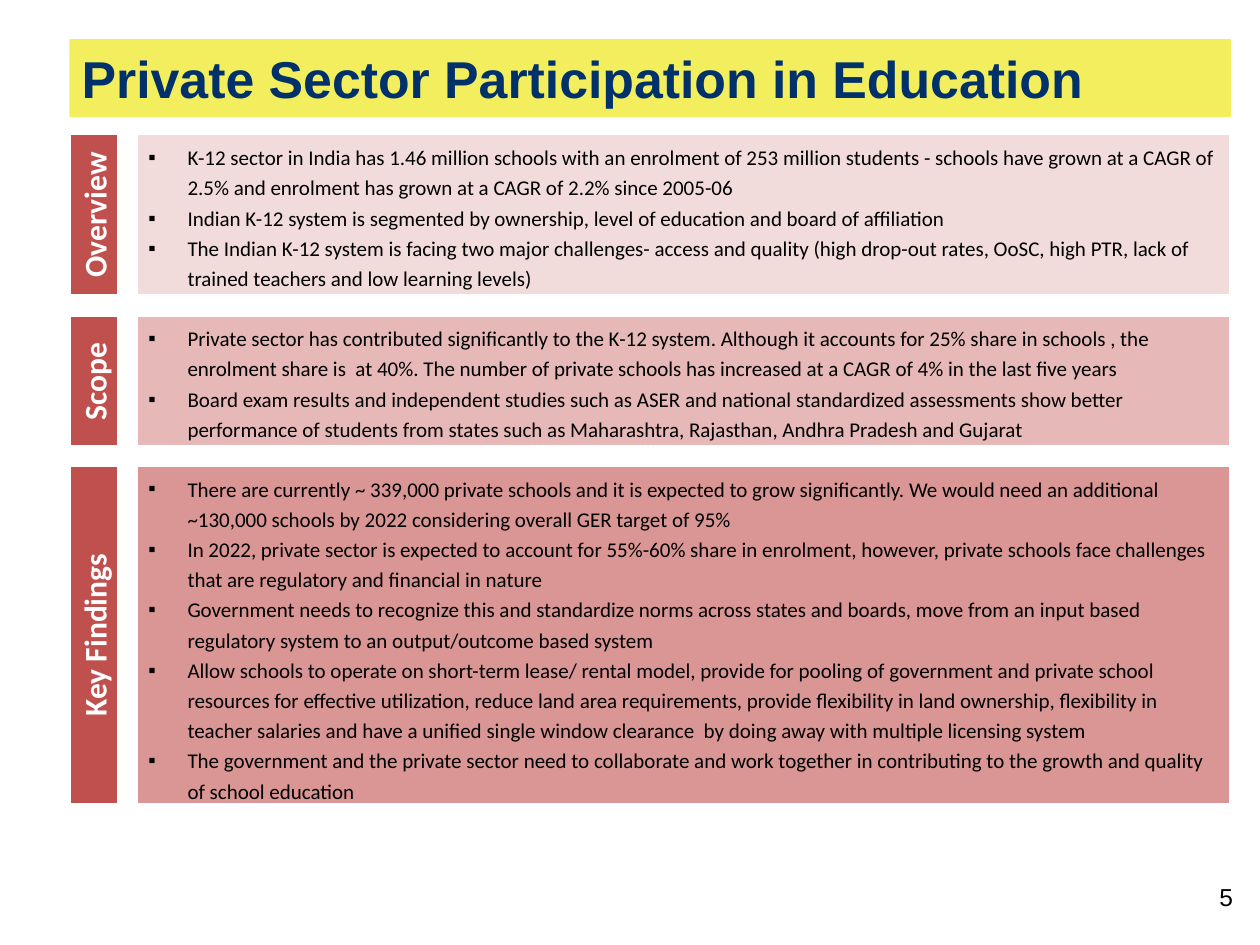
from pptx import Presentation
from pptx.dml.color import RGBColor
from pptx.enum import shapes, text
from pptx.oxml.ns import qn
from pptx.util import Inches, Pt
from lxml import etree

LEFT, BODY, RIGHT = 0.55, 1.08, 9.77
TAB = 0.39
MID, TOP = text.MSO_ANCHOR.MIDDLE, text.MSO_ANCHOR.TOP

# label, top, height, fill, anchor, points
BANDS = [
    ("Overview", 1.06, 1.29, "F2DCDB", TOP, [
        "K-12 sector in India has 1.46 million schools with an enrolment of 253 million students - schools have grown at a CAGR of 2.5% and enrolment has grown at a CAGR of 2.2% since 2005-06",
        "Indian K-12 system is segmented by ownership, level of education and board of affiliation",
        "The Indian K-12 system is facing two major challenges- access and quality (high drop-out rates, OoSC, high PTR, lack of trained teachers and low learning levels)",
    ]),
    ("Scope", 2.5, 1.05, "E6B9B8", MID, [
        "Private sector has contributed significantly to the K-12 system. Although it accounts for 25% share in schools , the enrolment share is  at 40%. The number of private schools has increased at a CAGR of 4% in the last five years",
        "Board exam results and independent studies such as ASER and national standardized assessments show better performance of students from states such as Maharashtra, Rajasthan, Andhra Pradesh and Gujarat",
    ]),
    ("Key Findings", 3.69, 2.7, "D99694", TOP, [
        "There are currently ~ 339,000 private schools and it is expected to grow significantly. We would need an additional ~130,000 schools by 2022 considering overall GER target of 95%",
        "In 2022, private sector is expected to account for 55%-60% share in enrolment, however, private schools face challenges that are regulatory and financial in nature",
        "Government needs to recognize this and standardize norms across states and boards, move from an input based regulatory system to an output/outcome based system",
        "Allow schools to operate on short-term lease/ rental model, provide for pooling of government and private school resources for effective utilization, reduce land area requirements, provide flexibility in land ownership, flexibility in teacher salaries and have a unified single window clearance  by doing away with multiple licensing system",
        "The government and the private sector need to collaborate and work together in contributing to the growth and quality of school education",
    ]),
]


def paint(fmt, hue):
    if isinstance(fmt, type(None)):
        return
    fmt.rgb = RGBColor.from_string(hue)


def put(obj, **vals):
    for key, val in vals.items():
        setattr(obj, key, val)


def box(slide, at, fill, edge=None):
    rect = slide.shapes.add_shape(
        shapes.MSO_SHAPE.RECTANGLE, *[Inches(v) for v in at])
    rect.shadow.inherit = False
    rect.fill.solid()
    paint(rect.fill.fore_color, fill)
    if edge:
        paint(rect.line.color, edge)
        rect.line.width = Pt(2)
    else:
        rect.line.fill.background()
    return rect


def write(frame, lines, hue, font, **look):
    """Fill the frame with one paragraph a line."""
    put(frame, word_wrap=True)
    for i, line in enumerate(lines):
        para = frame.add_paragraph() if i else frame.paragraphs[0]
        put(para, **look)
        run = para.add_run()
        run.text = line
        put(run.font, **font)
        paint(run.font.color, hue)


def bullet(para):
    props = para._p.get_or_add_pPr()
    props.set("marL", str(Inches(0.31)))
    props.set("indent", str(-Inches(0.31)))
    etree.SubElement(props, qn("a:buFont")).set("typeface", "Arial")
    etree.SubElement(props, qn("a:buChar")).set("char", "▪")


def title(slide):
    bar = box(slide, (LEFT, 0.31, RIGHT - LEFT, 0.62), "F3EE5E")
    sides = ("left", "right", "top", "bottom")
    put(bar.text_frame, vertical_anchor=MID,
        **{f"margin_{side}": Inches(0.1) for side in sides})
    write(bar.text_frame, ["Private Sector Participation in Education"],
          "00316B", dict(name="Arial", size=Pt(29.6), bold=True),
          alignment=text.PP_ALIGN.LEFT, space_before=Pt(6))


def band(slide, label, top, high, fill, anchor, points):
    # Points
    body = box(slide, (BODY, top, RIGHT - BODY, high), fill, "FFFFFF")
    body.text_frame.vertical_anchor = anchor
    write(body.text_frame, points, "000000",
          dict(name="Calibri", size=Pt(12)),
          alignment=text.PP_ALIGN.LEFT, line_spacing=1.2, level=1)
    for para in body.text_frame.paragraphs:
        bullet(para)
    # Upright label
    tab = box(slide, (LEFT, top, TAB, high), "C0504D", "FFFFFF")
    tab.text_frame.vertical_anchor = MID
    tab.text_frame._txBody.bodyPr.set("vert", "vert270")
    write(tab.text_frame, [label], "FFFFFF",
          dict(name="Calibri", size=Pt(18), bold=True),
          alignment=text.PP_ALIGN.CENTER)


def number(slide):
    note = slide.shapes.add_textbox(
        *[Inches(v) for v in (9.58, 6.95, 0.42, 0.4)])
    write(note.text_frame, ["5"], "000000", dict(name="Arial", size=Pt(14)))


def main():
    deck = Presentation()
    put(deck, slide_width=Inches(10), slide_height=Inches(7.5))
    slide = deck.slides.add_slide(deck.slide_layouts[6])
    title(slide)
    for row in BANDS:
        band(slide, *row)
    number(slide)
    deck.save("out.pptx")


if __name__ == "__main__":
    main()
